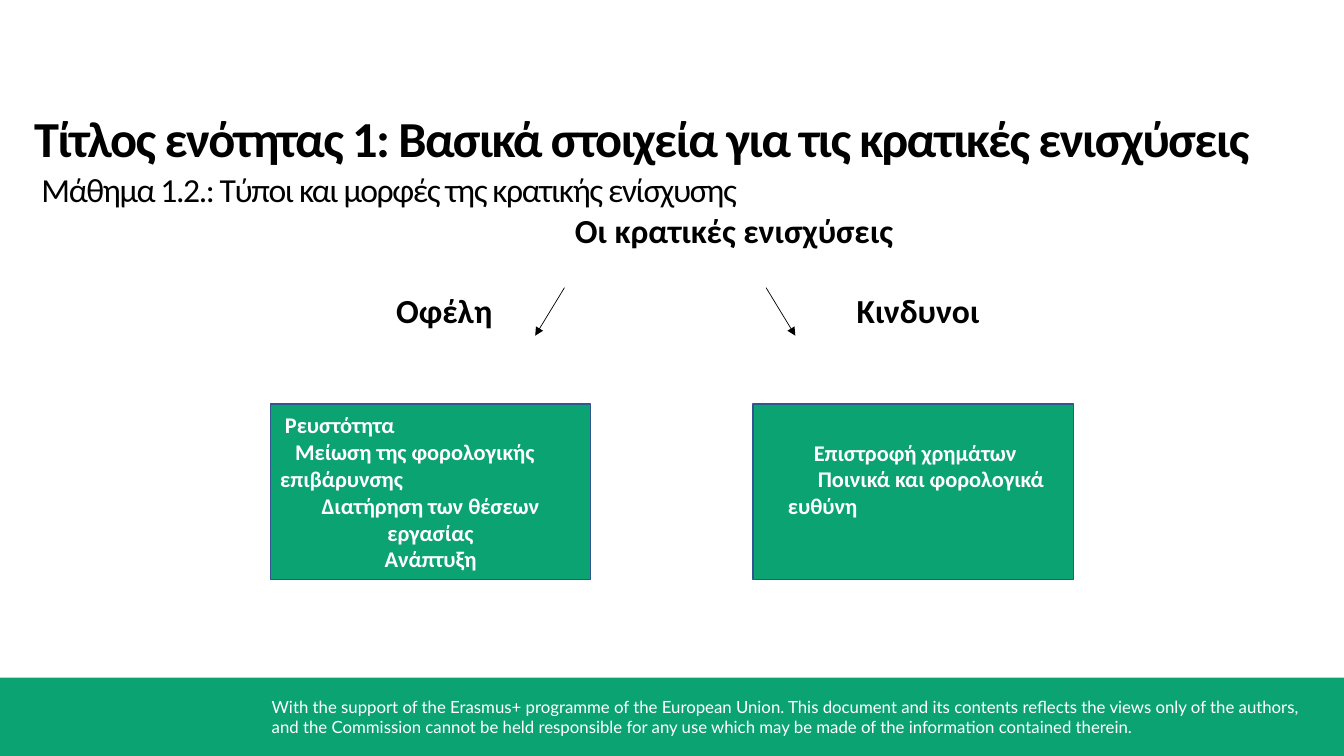
from lxml import etree
from pptx import Presentation
from pptx.dml.color import RGBColor
from pptx.enum.shapes import MSO_CONNECTOR, MSO_SHAPE
from pptx.enum.text import MSO_ANCHOR, PP_ALIGN
from pptx.oxml.ns import qn
from pptx.util import Pt


def color(hex_string):
    return RGBColor.from_string(hex_string)


class SlideBuilder:
    GREEN, BORDER, BLACK, WHITE = "0CA373", "325491", "000000", "FFFFFF"
    BODY_FONT, FOOTER_FONT = "Calibri", "Lato"

    def __init__(self, slide):
        self.slide = slide

    def format_text(self, paragraph, size, ink, bold=False, font=BODY_FONT,
                    align=PP_ALIGN.LEFT, spacing=0, left=0, first=0):
        """Indents and letter spacing are in points."""
        properties = paragraph._p.get_or_add_pPr()
        properties.set("marL", str(Pt(left)))
        properties.set("indent", str(Pt(first)))
        paragraph.alignment = align
        for run in paragraph.runs:
            run.font.name = font
            run.font.size = Pt(size)
            run.font.bold = bold
            run.font.color.rgb = color(ink)
            if spacing:
                run._r.get_or_add_rPr().set("spc", str(round(spacing * 100)))

    def text(self, words, x, y, width, height, size, ink=BLACK, **style):
        box = self.slide.shapes.add_textbox(Pt(x), Pt(y), Pt(width), Pt(height))
        box.text_frame.word_wrap = True
        box.text_frame.text = words
        self.format_text(box.text_frame.paragraphs[0], size, ink, **style)

    def rectangle(self, x, y, width, height, border=None):
        shape = self.slide.shapes.add_shape(
            MSO_SHAPE.RECTANGLE, Pt(x), Pt(y), Pt(width), Pt(height))
        shape.shadow.inherit = False
        shape.fill.solid()
        shape.fill.fore_color.rgb = color(self.GREEN)
        if border:
            shape.line.color.rgb = color(border)
            shape.line.width = Pt(1)
        else:
            shape.line.fill.background()
        return shape

    def card(self, x, items, bottom_margin):
        frame = self.rectangle(x, 288.7, 229, 125.3, self.BORDER).text_frame
        frame.word_wrap = True
        frame.vertical_anchor = MSO_ANCHOR.MIDDLE
        frame.margin_top = Pt(3)
        frame.margin_bottom = Pt(bottom_margin)
        frame.text = "\n".join(words for words, _ in items)
        for paragraph, (_, style) in zip(frame.paragraphs, items):
            self.format_text(paragraph, 16, self.WHITE, bold=True, **style)

    def arrow(self, x1, y1, x2, y2):
        connector = self.slide.shapes.add_connector(
            MSO_CONNECTOR.STRAIGHT, Pt(x1), Pt(y1), Pt(x2), Pt(y2))
        connector.line.color.rgb = color(self.BLACK)
        connector.line.width = Pt(0.5)
        etree.SubElement(connector.line._get_or_add_ln(),
                         qn("a:tailEnd")).set("type", "triangle")
        etree.SubElement(connector._element.spPr, qn("a:effectLst"))


def main():
    presentation = Presentation()
    presentation.slide_width, presentation.slide_height = Pt(960), Pt(540)
    builder = SlideBuilder(
        presentation.slides.add_slide(presentation.slide_layouts[6]))

    # Footer band and disclaimer
    builder.rectangle(0, 484, 960, 56)
    builder.text(
        "With the support of the Erasmus+ programme of the European Union. "
        "This document and its contents reflects the views only of the authors, "
        "and the Commission cannot be held responsible for any use which may be "
        "made of the information contained therein.",
        187, 494, 750, 36, 12, builder.WHITE, font=builder.FOOTER_FONT)

    # Unit title and lesson
    builder.text("Τίτλος ενότητας 1: Βασικά στοιχεία για τις κρατικές ενισχύσεις",
                 17.3, 73.3, 931, 51, 36, bold=True, spacing=-1.1)
    builder.text("Μάθημα 1.2.: Τύποι και μορφές της κρατικής ενίσχυσης",
                 22.5, 117, 926, 36.5, 24, spacing=-1)

    # Topic and its two branches: centre, top, width
    headings = [("Οι κρατικές ενισχύσεις", 524.3, 146.2, 300),
                ("Οφέλη", 317.3, 203.7, 120),
                ("Κινδυνοι", 655.8, 203.7, 140)]
    for heading, center, top, width in headings:
        builder.text(heading, center - width / 2, top, width, 36.5, 24,
                     bold=True, align=PP_ALIGN.CENTER)
    builder.arrow(403.2, 205.5, 382.3, 239.8)
    builder.arrow(547.2, 205.5, 568.1, 239.8)

    # Risks and benefits
    centered = {"align": PP_ALIGN.CENTER}
    builder.card(537.8, [
        ("Επιστροφή χρημάτων", {"left": 36.4}),
        ("Ποινικά και φορολογικά ευθύνη", {"left": 17.9, "first": 21.4})],
        bottom_margin=21.5)
    builder.card(193, [
        ("Ρευστότητα", {"left": 3.4}),
        ("Μείωση της φορολογικής επιβάρυνσης", {"first": 10.7}),
        ("Διατήρηση των θέσεων εργασίας", centered),
        ("Ανάπτυξη", centered)],
        bottom_margin=3)

    presentation.save("out.pptx")


if __name__ == "__main__":
    main()
